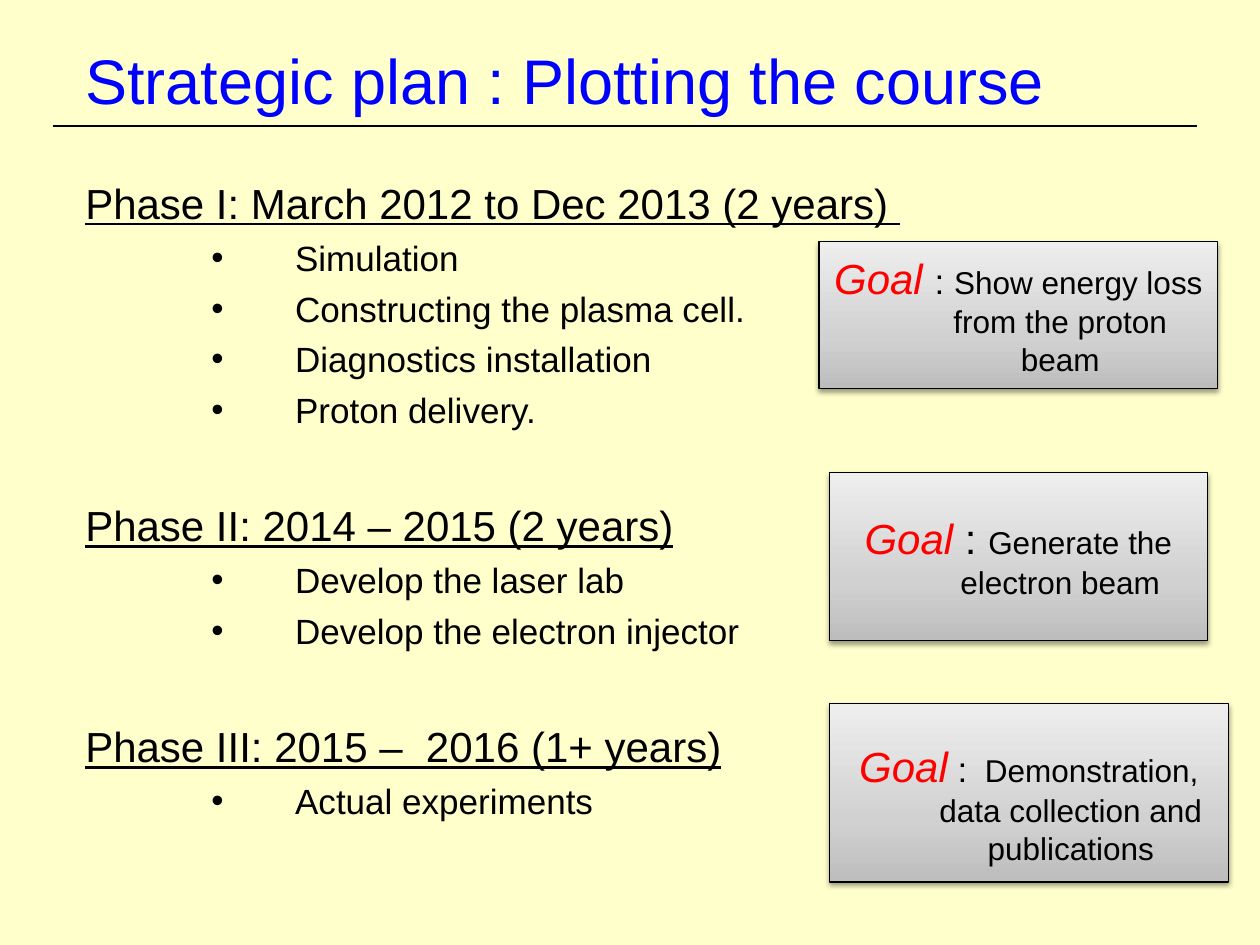
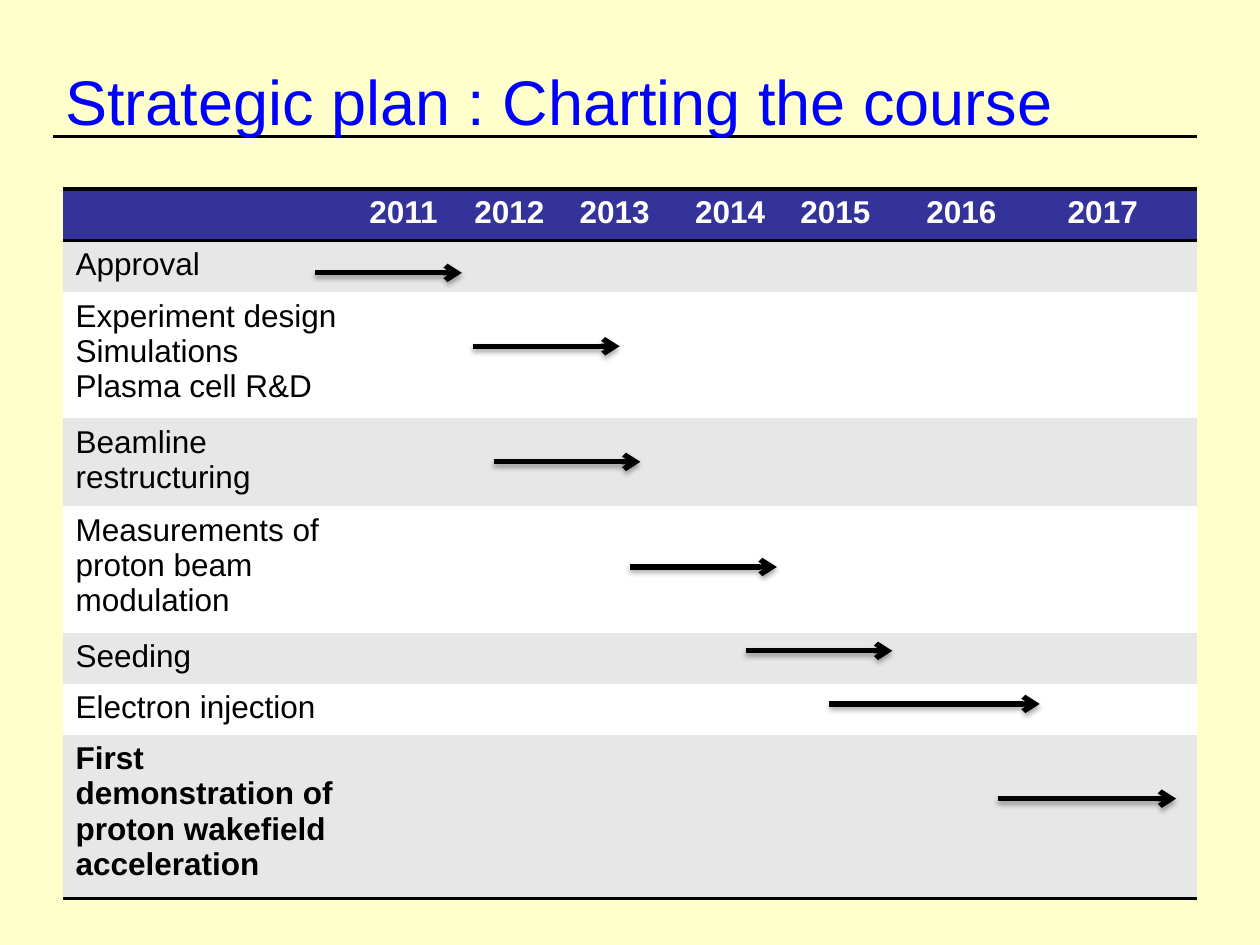
from lxml import etree
from pptx import Presentation
from pptx.dml.color import RGBColor
from pptx.enum.shapes import MSO_CONNECTOR, MSO_SHAPE
from pptx.enum.text import MSO_ANCHOR, PP_ALIGN
from pptx.oxml.ns import qn
from pptx.util import Cm, Pt

STRAIGHT = MSO_CONNECTOR.STRAIGHT
RECTANGLE = MSO_SHAPE.RECTANGLE
MIDDLE = MSO_ANCHOR.MIDDLE
CENTER = PP_ALIGN.CENTER

# Shared look
FONT = "Arial"
CREAM, BLUE, RED = "FFFFCC", "0000FF", "FF0000"
BLACK, WHITE, NAVY, GREY = "000000", "FFFFFF", "333399", "E7E7E7"
GOAL_GRADIENT = [(0, "BDBDBD"), (35, "D1D1D1"), (100, "EEEEEE")]
RULE_LEFT, RULE_RIGHT = 1.07, 24.13
HANGING = 1.69
NO_STYLE_NO_GRID = "{2D5ABB26-0587-4C30-8999-92F81FD0307C}"

# Slide 1: heading, activities
PHASES = [
    ("Phase I: March 2012 to Dec 2013 (2 years) ",
     ["Simulation", "Constructing the plasma cell.",
      "Diagnostics installation", "Proton delivery."]),
    ("Phase II: 2014 – 2015 (2 years)",
     ["Develop the laser lab", "Develop the electron injector"]),
    ("Phase III: 2015 –  2016 (1+ years)", ["Actual experiments"]),
]
# Box, top inset, runs of (text, size, colour)
GOALS = [
    ((16.51, 4.87, 8.04, 2.96), 0.13,
     [("Goal ", 24, RED), (": ", 20, BLACK),
      ("Show energy loss from the proton beam", 18, BLACK)]),
    ((16.72, 9.53, 7.62, 3.39), 0.13,
     [("Goal", 24, RED), (" : ", 24, BLACK),
      ("Generate the electron beam", 18, BLACK)]),
    ((16.72, 14.18, 8.04, 3.6), 0.57,
     [("Goal", 24, RED), (" :", 20, BLACK),
      ("  Demonstration, data collection and publications", 18, BLACK)]),
]

# Slide 2: task, row height, arrow start, arrow end, arrow height on the slide
YEARS = range(2011, 2018)
COLUMN_WIDTHS = [5.92, 2.12, 2.12, 2.33, 2.12, 2.54, 2.85, 2.85]
HEADER_HEIGHT = 1.04
TASKS = [
    ("Approval", 1.04, 6.35, 9.31, 5.5),
    ("Experiment design\nSimulations\nPlasma cell R&D", 2.4, 9.53, 12.49, 6.98),
    ("Beamline restructuring", 1.67, 9.95, 12.91, 9.31),
    ("Measurements of proton beam modulation", 2.38, 12.7, 15.66, 11.43),
    ("Seeding", 1.03, 15.03, 17.99, 13.12),
    ("Electron injection", 1.03, 16.72, 20.96, 14.19),
    ("First demonstration of proton wakefield acceleration", 3.1,
     20.11, 23.71, 16.1),
]


def rgb(value):
    return RGBColor.from_string(value)


def style_runs(paragraph, size, color, bold=False, underline=False):
    for run in paragraph.runs:
        font = run.font
        font.name, font.size, font.bold = FONT, Pt(size), bold
        font.underline = underline
        font.color.rgb = rgb(color)


def set_indent(paragraph, left, bullet=False):
    properties = paragraph._p.get_or_add_pPr()
    properties.set("marL", str(Cm(left)))
    properties.set("indent", str(-Cm(HANGING)))
    if bullet:
        etree.SubElement(properties, qn("a:buFont"), typeface=FONT)
        etree.SubElement(properties, qn("a:buChar"), char="•")


def set_shadow(shape, opacity=0, distance=0):
    """Replace the theme shadow; zero opacity means none."""
    effects = etree.SubElement(shape._element.spPr, qn("a:effectLst"))
    if opacity:
        shadow = etree.SubElement(
            effects, qn("a:outerShdw"), blurRad=str(Pt(3.1)),
            dist=str(Pt(distance)), dir="5400000", rotWithShape="0")
        color = etree.SubElement(shadow, qn("a:srgbClr"), val=BLACK)
        etree.SubElement(color, qn("a:alpha"), val=str(opacity * 1000))


def add_line(slide, start, end, y, width):
    line = slide.shapes.add_connector(STRAIGHT, Cm(start), Cm(y), Cm(end), Cm(y))
    line.line.color.rgb = rgb(BLACK)
    line.line.width = Pt(width)
    return line


def add_arrow(slide, start, end, y):
    arrow = add_line(slide, start, end, y, 3)
    etree.SubElement(arrow.line._get_or_add_ln(), qn("a:tailEnd"), type="arrow")
    set_shadow(arrow, 35, 1.8)


def add_text_box(slide, box):
    frame = slide.shapes.add_textbox(*map(Cm, box)).text_frame
    frame.word_wrap = True
    return frame


def add_titled_slide(deck, title, box, rule_y):
    slide = deck.slides.add_slide(deck.slide_layouts[6])
    background = slide.background.fill
    background.solid()
    background.fore_color.rgb = rgb(CREAM)
    set_shadow(add_line(slide, RULE_LEFT, RULE_RIGHT, rule_y, 1.25))
    frame = add_text_box(slide, box)
    frame.vertical_anchor = MIDDLE
    frame.text = title
    style_runs(frame.paragraphs[0], 36, BLUE)
    return slide


def add_phases(slide, box):
    frame = add_text_box(slide, box)
    for number, (heading, activities) in enumerate(PHASES):
        paragraph = frame.add_paragraph() if number else frame.paragraphs[0]
        paragraph.text = heading
        set_indent(paragraph, HANGING)
        if number:
            paragraph.space_before = Pt(39.5)
        style_runs(paragraph, 24, BLACK, underline=True)
        for activity in activities:
            paragraph = frame.add_paragraph()
            paragraph.text = activity
            paragraph.level = 1
            set_indent(paragraph, 4.23, bullet=True)
            paragraph.space_before = Pt(5)
            style_runs(paragraph, 20, BLACK)


def add_goal(slide, box, top_inset, parts):
    goal = slide.shapes.add_shape(RECTANGLE, *map(Cm, box))
    goal.fill.gradient()
    goal.fill.gradient_angle = 90
    stops = goal._element.spPr.find(".//" + qn("a:gsLst"))
    for stop in list(stops):
        stops.remove(stop)
    for position, color in GOAL_GRADIENT:
        stop = etree.SubElement(stops, qn("a:gs"), pos=str(position * 1000))
        etree.SubElement(stop, qn("a:srgbClr"), val=color)
    goal.line.color.rgb = rgb(BLACK)
    goal.line.width = Pt(0.75)
    set_shadow(goal, 38, 1.6)

    frame = goal.text_frame
    frame.word_wrap = True
    frame.vertical_anchor = MIDDLE
    frame.margin_top = Cm(top_inset)
    paragraph = frame.paragraphs[0]
    paragraph.alignment = CENTER
    set_indent(paragraph, HANGING)
    for text, size, color in parts:
        run = paragraph.add_run()
        run.text = text
        run.font.name, run.font.size = FONT, Pt(size)
        run.font.color.rgb = rgb(color)
        run.font.italic = color == RED


def fill_cell(cell, text, fill, color, bold, borders):
    for side in borders:
        border = etree.SubElement(cell._tc.get_or_add_tcPr(), qn(f"a:ln{side}"),
                                  w=str(Pt(2)))
        solid = etree.SubElement(border, qn("a:solidFill"))
        etree.SubElement(solid, qn("a:srgbClr"), val=BLACK)
    cell.fill.solid()
    cell.fill.fore_color.rgb = rgb(fill)
    cell.text_frame.text = text
    for paragraph in cell.text_frame.paragraphs:
        style_runs(paragraph, 18, color, bold)


def add_schedule(slide, left, top):
    heights = [HEADER_HEIGHT] + [task[1] for task in TASKS]
    schedule = slide.shapes.add_table(
        len(heights), len(COLUMN_WIDTHS), Cm(left), Cm(top),
        Cm(sum(COLUMN_WIDTHS)), Cm(sum(heights))).table
    schedule.horz_banding = False
    schedule._tbl.tblPr.find(qn("a:tableStyleId")).text = NO_STYLE_NO_GRID
    for column, width in zip(schedule.columns, COLUMN_WIDTHS):
        column.width = Cm(width)
    for row, height in zip(schedule.rows, heights):
        row.height = Cm(height)

    # Header, then one banded row per task
    for column, label in enumerate(["", *map(str, YEARS)]):
        fill_cell(schedule.cell(0, column), label, NAVY, WHITE, True, "TB")
    for row, (task, *_) in enumerate(TASKS, start=1):
        last = row == len(TASKS)
        for column in range(len(COLUMN_WIDTHS)):
            fill_cell(schedule.cell(row, column), "" if column else task,
                      GREY if row % 2 else WHITE, BLACK, last, "B" if last else "")


def main():
    deck = Presentation()
    deck.slide_width, deck.slide_height = Cm(25.4), Cm(19.05)

    # Phases and their goals
    plan = add_titled_slide(deck, "Strategic plan : Plotting the course",
                            (1.47, 0, 22.86, 3.18), 2.54)
    add_phases(plan, (1.47, 3.45, 23.29, 14.17))
    for box, top_inset, parts in GOALS:
        add_goal(plan, box, top_inset, parts)

    # Schedule by year
    timeline = add_titled_slide(deck, "Strategic plan : Charting the course",
                                (1.07, 0.43, 23.7, 3.18), 2.75)
    add_schedule(timeline, 1.27, 3.81)
    for _, _, start, end, y in TASKS:
        add_arrow(timeline, start, end, y)

    deck.save("out.pptx")


if __name__ == "__main__":
    main()
